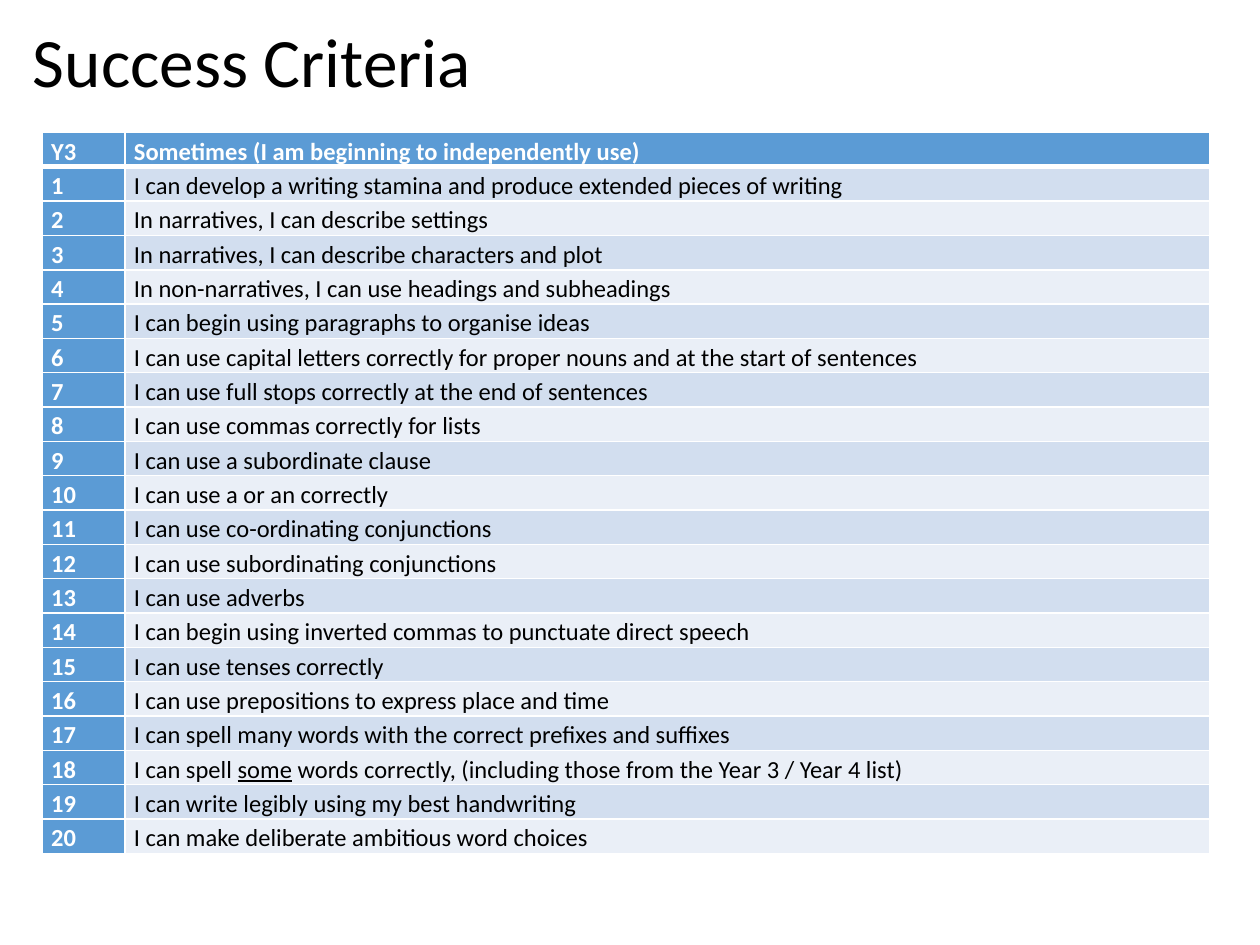
from dataclasses import dataclass

from lxml.etree import SubElement
from pptx import Presentation
from pptx.dml.color import RGBColor as Color
from pptx.enum.text import MSO_ANCHOR as Anchor, PP_ALIGN as Align
from pptx.oxml.ns import qn
from pptx.util import Cm, Pt


@dataclass(frozen=True)
class Theme:
    font: str = "Calibri"
    title_size: float = 39.6
    table_size: float = 14
    dark: str = "000000"
    light: str = "FFFFFF"
    accent: str = "5B9BD5"
    bands: tuple = ("D2DEEF", "EAEFF7")
    thin_line: int = 1
    thick_line: int = 3


TITLE = "Success Criteria"
HEADER = ("Y3", "Sometimes (I am beginning to independently use)")
# Underscores enclose underlined words.
CRITERIA = (
    "I can develop a writing stamina and produce extended pieces of writing",
    "In narratives, I can describe settings",
    "In narratives, I can describe characters and plot",
    "In non-narratives, I can use headings and subheadings",
    "I can begin using paragraphs to organise ideas",
    "I can use capital letters correctly for proper nouns and at the start of sentences",
    "I can use full stops correctly at the end of sentences",
    "I can use commas correctly for lists",
    "I can use a subordinate clause",
    "I can use a or an correctly",
    "I can use co-ordinating conjunctions",
    "I can use subordinating conjunctions",
    "I can use adverbs",
    "I can begin using inverted commas to punctuate direct speech",
    "I can use tenses correctly",
    "I can use prepositions to express place and time",
    "I can spell many words with the correct prefixes and suffixes",
    "I can spell _some_ words correctly, (including those from the Year 3 / Year 4 list)",
    "I can write legibly using my best handwriting",
    "I can make deliberate ambitious word choices",
)


def apply(target, values):
    for name, value in values.items():
        setattr(target, name, value)


class SlideBuilder:
    def __init__(self, deck, theme):
        self.theme = theme
        self.page = deck.slides.add_slide(deck.slide_layouts[5])

    def add_text(self, para, text, size, color, bold=False):
        """Add text to a paragraph, underlining what stands between underscores."""
        for index, part in enumerate(text.split("_")):
            span = para.add_run()
            span.text = part
            apply(span.font, {"name": self.theme.font, "size": Pt(size), "bold": bold})
            span.font.color.rgb = Color.from_string(color)
            if index % 2:
                span.font.underline = True

    def title(self, text, left, top, width, height):
        box = self.page.shapes.title
        apply(box, {"left": Cm(left), "top": Cm(top),
                    "width": Cm(width), "height": Cm(height)})
        apply(box.text_frame, {"vertical_anchor": Anchor.MIDDLE, "word_wrap": True})
        para = box.text_frame.paragraphs[0]
        apply(para, {"alignment": Align.LEFT, "line_spacing": 0.9})
        self.add_text(para, text, self.theme.title_size, self.theme.dark)

    def borders(self, cell, bottom):
        properties = cell._tc.get_or_add_tcPr()
        thin = self.theme.thin_line
        for side, width in {"L": thin, "R": thin, "T": thin, "B": bottom}.items():
            line = SubElement(properties, qn(f"a:ln{side}"), w=str(Pt(width)))
            fill = SubElement(line, qn("a:solidFill"))
            SubElement(fill, qn("a:srgbClr"), val=self.theme.light)

    def cell(self, cell, text, fill, heading, bottom):
        theme = self.theme
        apply(cell, {"margin_left": Cm(0.18), "margin_right": Cm(0.18),
                     "margin_top": 0, "margin_bottom": 0,
                     "vertical_anchor": Anchor.TOP if heading else Anchor.MIDDLE})
        self.borders(cell, bottom)
        cell.fill.solid()
        cell.fill.fore_color.rgb = Color.from_string(fill)
        para = cell.text_frame.paragraphs[0]
        para.line_spacing = 1.15
        color = theme.light if heading else theme.dark
        self.add_text(para, text, theme.table_size, color, heading)

    def table(self, rows, left, top, widths, row_height):
        """Draw a table whose first row and first column are headings."""
        theme = self.theme
        table = self.page.shapes.add_table(
            len(rows), len(widths), Cm(left), Cm(top),
            Cm(sum(widths)), Cm(row_height * len(rows))).table
        table.first_col = True
        for column, width in zip(table.columns, widths):
            column.width = Cm(width)
        for r, row in enumerate(rows):
            table.rows[r].height = Cm(row_height)
            for c, text in enumerate(row):
                heading = r == 0 or c == 0
                fill = theme.accent if heading else theme.bands[(r - 1) % 2]
                bottom = theme.thin_line if r else theme.thick_line
                self.cell(table.cell(r, c), text, fill, heading, bottom)


def main():
    deck = Presentation()
    apply(deck, {"slide_width": Cm(25.4), "slide_height": Cm(19.05)})
    builder = SlideBuilder(deck, Theme())
    builder.title(TITLE, 0.41, 0.48, 21.9, 1.65)
    numbered = [(str(number), text) for number, text in enumerate(CRITERIA, 1)]
    builder.table([HEADER, *numbered], 0.85, 2.67, (1.67, 21.87), 0.69)
    deck.save("out.pptx")


if __name__ == "__main__":
    main()
